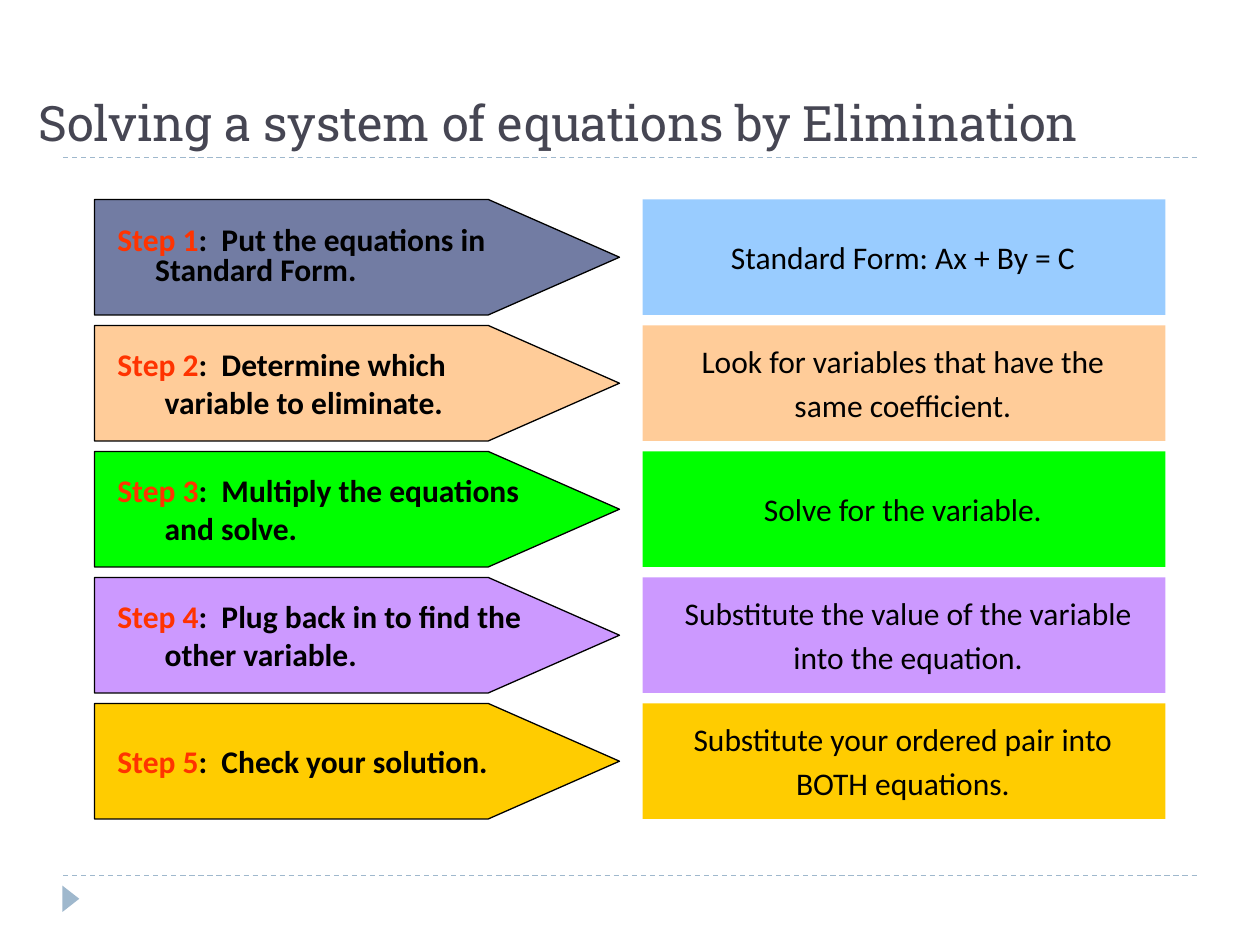
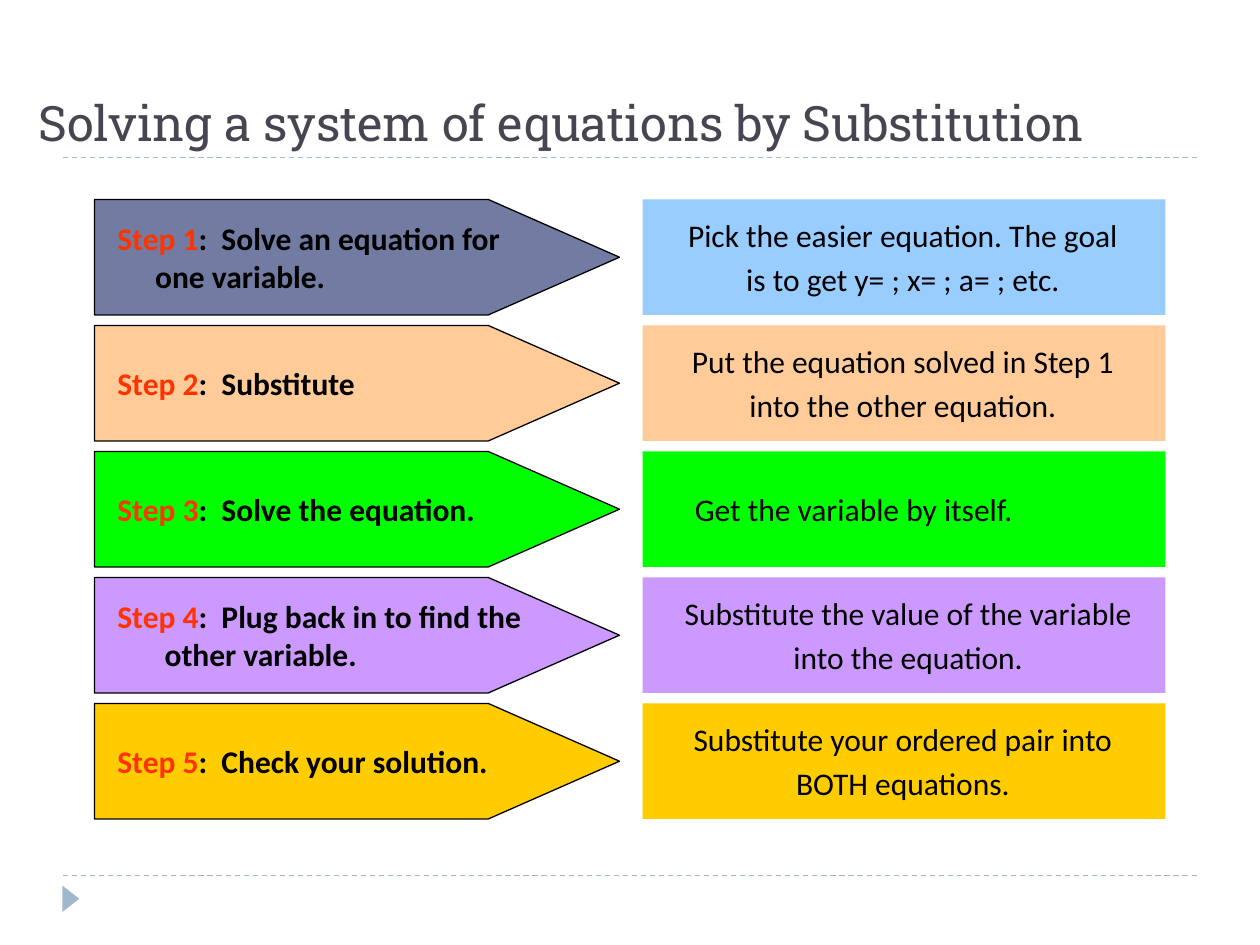
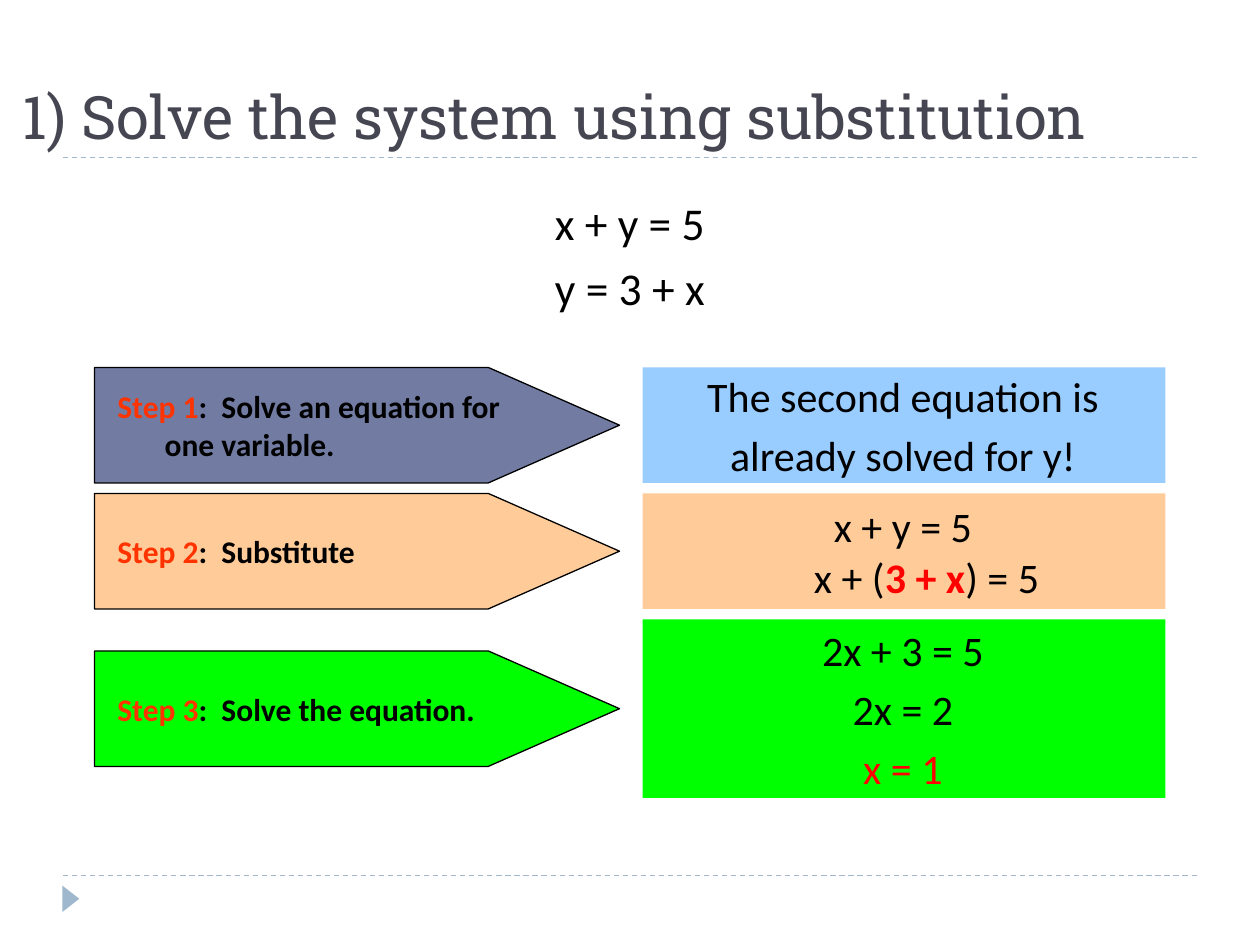
from pptx import Presentation
from pptx.dml.color import RGBColor
from pptx.enum.dml import MSO_LINE
from pptx.enum.shapes import MSO_CONNECTOR as CONNECTOR, MSO_SHAPE as SHAPE
from pptx.enum.text import MSO_ANCHOR as ANCHOR, PP_ALIGN as ALIGN
from pptx.oxml.xmlchemy import OxmlElement
from pptx.util import Emu, Pt

BLACK = RGBColor(0x00, 0x00, 0x00)
RED = RGBColor(0xFF, 0x00, 0x00)
STEP_RED = RGBColor(0xFF, 0x33, 0x00)
TITLE_GREY = RGBColor(0x46, 0x46, 0x53)
RULE_BLUE = RGBColor(0x9F, 0xB8, 0xCD)
SLATE = RGBColor(0x72, 0x7C, 0xA3)
SKY = RGBColor(0x99, 0xCC, 0xFF)
PEACH = RGBColor(0xFF, 0xCC, 0x99)
GREEN = RGBColor(0x00, 0xFF, 0x00)
LILAC = RGBColor(0xCC, 0x99, 0xFF)
GOLD = RGBColor(0xFF, 0xCC, 0x00)
BANDS = [(SLATE, SKY), (PEACH, PEACH), (GREEN, GREEN), (LILAC, LILAC), (GOLD, GOLD)]

EMU_PER_PX = 7620
ROW_PITCH = 120
BAND_HEIGHT = 110


def px(length):
    return Emu(length * EMU_PER_PX)


class Deck:
    body_font = "Calibri"
    title_font = "Roboto Slab"

    def __init__(self):
        self.prs = Presentation()
        self.prs.slide_width, self.prs.slide_height = px(1200), px(900)
        self.slide = None

    def new_slide(self, title, left, size):
        self.slide = self.prs.slides.add_slide(self.prs.slide_layouts[6])
        for y in (834, 150):
            self.rule(y)
        marker = self.shape(SHAPE.ISOSCELES_TRIANGLE, 55, 848, 25, 16, RULE_BLUE)
        marker.rotation = 90
        self.text([[(title, TITLE_GREY, False)]], left, 30, 1090, 120, size,
                  font=self.title_font, anchor=ANCHOR.BOTTOM, hanging=0)

    def rule(self, y):
        rule = self.slide.shapes.add_connector(CONNECTOR.STRAIGHT, px(60), px(y), px(1140), px(y))
        rule.line.color.rgb = RULE_BLUE
        rule.line.width = Pt(0.75)
        rule.line.dash_style = MSO_LINE.DASH
        rule._element.spPr.append(OxmlElement("a:effectLst"))

    def shape(self, kind, x, y, width, height, fill, outline=None):
        shape = self.slide.shapes.add_shape(kind, px(x), px(y), px(width), px(height))
        shape.shadow.inherit = False
        shape.fill.solid()
        shape.fill.fore_color.rgb = fill
        if outline is None:
            shape.line.fill.background()
        else:
            shape.line.color.rgb = outline
            shape.line.width = Pt(0.75)
        return shape

    def text(self, paragraphs, x, y, width, height, size, font=body_font, anchor=ANCHOR.MIDDLE,
             align=ALIGN.LEFT, hanging=45, margin=None, before=0, spacing=None):
        frame = self.slide.shapes.add_textbox(px(x), px(y), px(width), px(height)).text_frame
        frame.word_wrap = True
        frame.vertical_anchor = anchor
        for index, spans in enumerate(paragraphs):
            paragraph = frame.add_paragraph() if index else frame.paragraphs[0]
            paragraph.alignment = align
            paragraph.space_before = Pt(before)
            paragraph.line_spacing = spacing
            properties = paragraph._p.get_or_add_pPr()
            properties.set("marL", str(px(hanging if margin is None else margin)))
            properties.set("indent", str(px(-hanging)))
            for words, colour, bold in spans:
                done = len(paragraph.runs)
                for part, line in enumerate(words.split("\n")):
                    if part:
                        paragraph.add_line_break()
                    paragraph.add_run().text = line
                for run in paragraph.runs[done:]:
                    run.font.name = font
                    run.font.size = Pt(size)
                    run.font.bold = bold
                    run.font.color.rgb = colour

    def arrow(self, number, action, top, **style):
        arrow = self.shape(SHAPE.PENTAGON, 90, top, 500, BAND_HEIGHT, BANDS[number - 1][0], BLACK)
        arrow.adjustments[0] = 1.136
        label = [(f"Step {number}", STEP_RED, True), (f":  {action}", BLACK, True)]
        self.text([label], 100, top + 10, 430, BAND_HEIGHT - 20, 18, **style)

    def note(self, number, lines, top, height=BAND_HEIGHT, width=480, size=18,
             align=ALIGN.CENTER, **style):
        self.shape(SHAPE.RECTANGLE, 612, top, 498, height, BANDS[number - 1][1])
        self.text([plain(line) for line in lines], 620, top + 10, width, height - 20, size,
                  align=align, before=size / 5, **style)


def plain(line):
    return [(line, BLACK, False)] if isinstance(line, str) else line


SHARED_STEPS = [
    ("Plug back in to find the other variable.",
     ["Substitute the value of the variable", "into the equation."], {}, {"width": 490}),
    ("Check your solution.", ["Substitute your ordered pair into", "BOTH equations."], {}, {}),
]
METHODS = {
    "Elimination": [
        ("Put the equations in Standard Form.", ["Standard Form: Ax + By = C"],
         {"hanging": 36, "spacing": 0.8}, {}),
        ("Determine which variable to eliminate.",
         ["Look for variables that have the", "same coefficient."], {}, {}),
        ("Multiply the equations and solve.", ["Solve for the variable."], {}, {}),
    ],
    "Substitution": [
        ("Solve an equation for one variable.",
         ["Pick the easier equation. The goal", "is to get y= ; x= ; a= ; etc."],
         {"hanging": 36}, {}),
        ("Substitute",
         ["Put the equation solved in Step 1", "into the other equation."], {}, {}),
        ("Solve the equation.", ["Get the variable by itself."], {},
         {"align": ALIGN.LEFT, "hanging": 0, "margin": 30}),
    ],
}
SUBSTITUTED = [("x + y = 5\nx + (", BLACK, False), ("3 + x", RED, True), (") = 5", BLACK, False)]
EXAMPLE = [
    ("Solve an equation for one variable.", 350,
     ["The second equation is", "already solved for y!"], BAND_HEIGHT),
    ("Substitute", 470, [SUBSTITUTED], BAND_HEIGHT),
    ("Solve the equation.", 620, ["2x + 3 = 5", "2x = 2", [("x = 1", RED, False)]], 170),
]


def main():
    deck = Deck()
    for method, steps in METHODS.items():
        deck.new_slide(f"Solving a system of equations by {method}", 25, 27.9)
        for number, (action, lines, arrow_style, note_style) in enumerate(steps + SHARED_STEPS, 1):
            top = 190 + (number - 1) * ROW_PITCH
            deck.arrow(number, action, top, **arrow_style)
            deck.note(number, lines, top, **note_style)

    deck.new_slide("1) Solve the system using substitution", 10, 34.2)
    deck.text([plain("x + y = 5"), plain("y = 3 + x")], 80, 180, 1040, 610, 26,
              anchor=ANCHOR.TOP, align=ALIGN.CENTER, hanging=36, before=6)
    for number, (action, arrow_top, lines, note_height) in enumerate(EXAMPLE, 1):
        deck.arrow(number, action, arrow_top)
        deck.note(number, lines, 350 + (number - 1) * ROW_PITCH, note_height, size=24)

    deck.prs.save("out.pptx")


if __name__ == "__main__":
    main()
